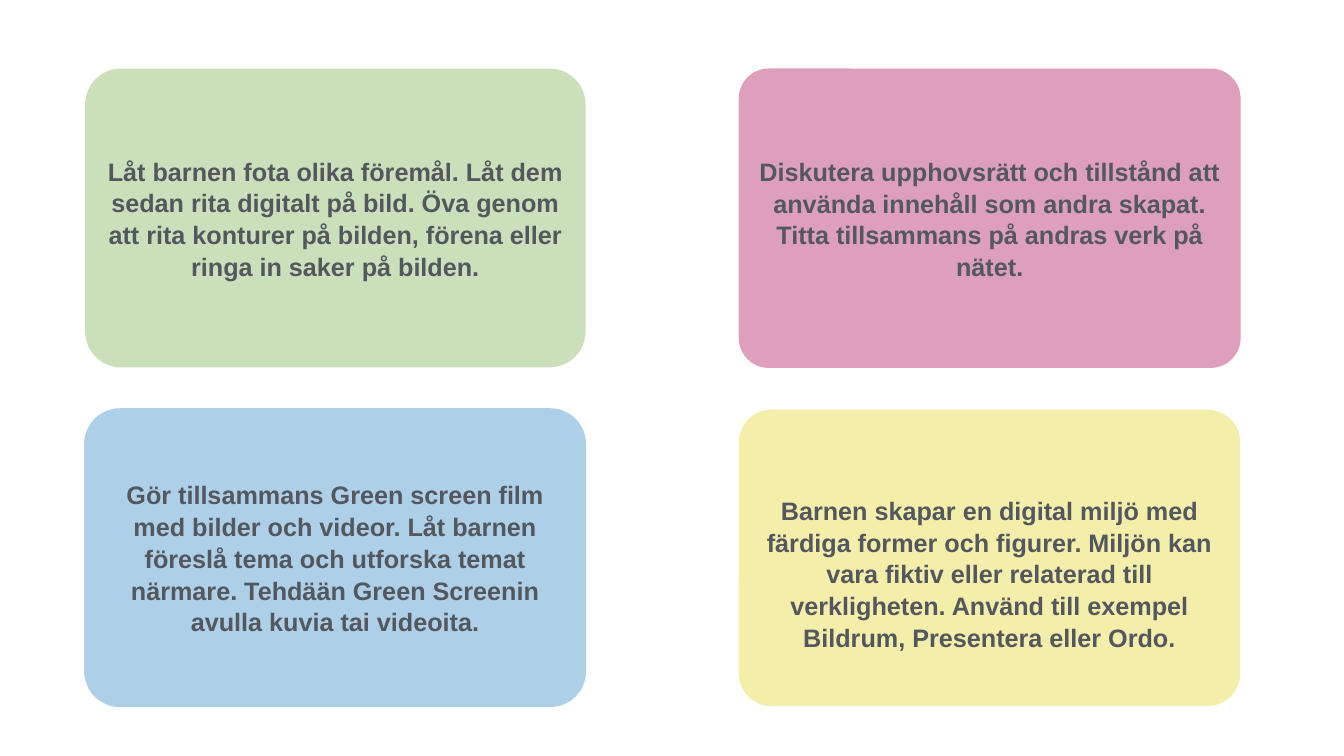
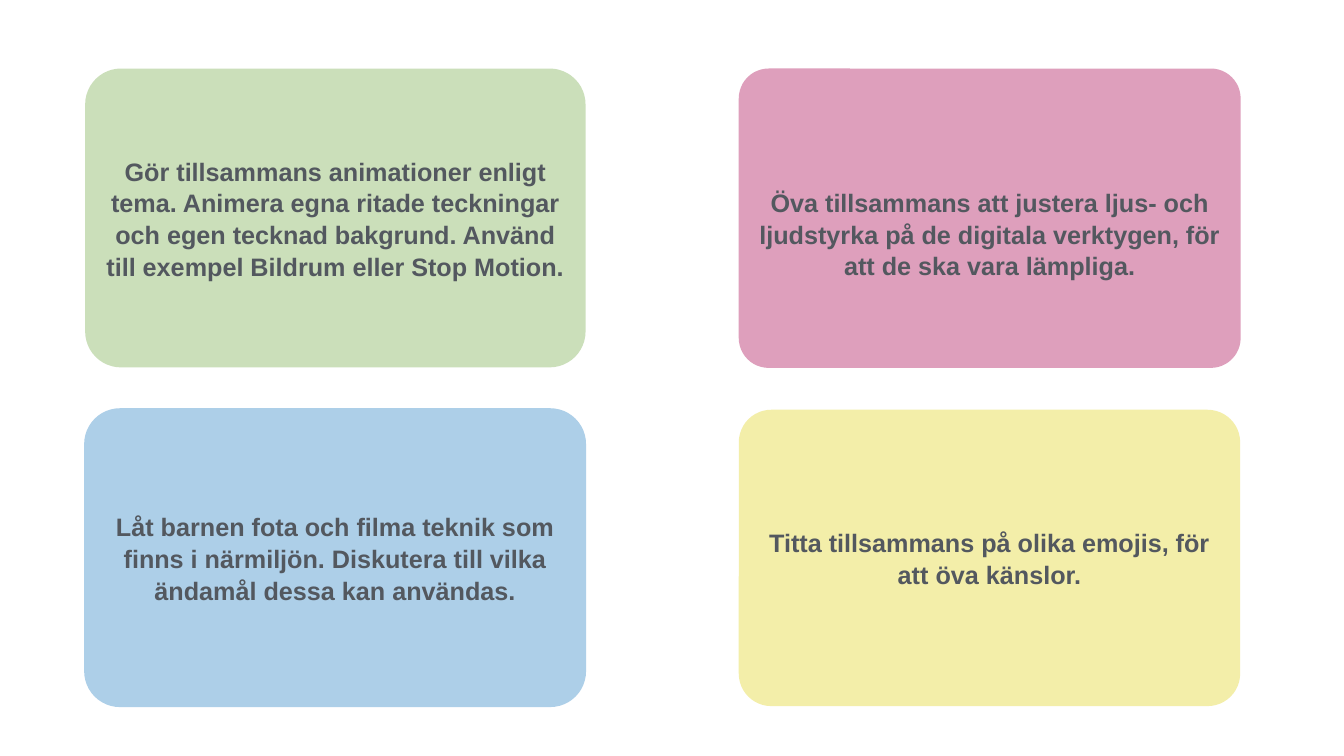
from pptx import Presentation
from pptx.dml.color import RGBColor
from pptx.enum.shapes import MSO_SHAPE
from pptx.enum.text import MSO_ANCHOR, PP_ALIGN
from pptx.util import Inches, Pt

COLORS = {
    "green": "CBDFBA",
    "blue": "ADCFE8",
    "yellow": "F3EEA9",
    "pink": "DE9FBC",
    "text": "53585F",
}
FONT = {"name": "Arial", "size": Pt(36), "bold": True}
INSET = 0.06
LINE_HEIGHT = 0.6

# colour: left, top, width, height, corner radius
CARDS = {
    "green": (1.69, 1.36, 9.93, 5.93, 0.12),
    "blue": (1.67, 8.1, 9.96, 5.93, 0.12),
    "yellow": (14.66, 8.13, 9.95, 5.88, 0.11),
    "pink": (14.66, 1.36, 9.96, 5.94, 0.1),
}

# For each slide, the text of every card and the cards whose text sits lower
SLIDES = [
    ({
        "green": "Låt barnen fota olika föremål. Låt dem sedan rita digitalt på bild. "
                 "Öva genom att rita konturer på bilden, förena eller ringa in saker på bilden.",
        "blue": "Gör tillsammans Green screen film med bilder och videor. Låt barnen föreslå "
                "tema och utforska temat närmare. Tehdään Green Screenin avulla kuvia tai videoita.",
        "yellow": "Barnen skapar en digital miljö med färdiga former och figurer. Miljön kan "
                  "vara fiktiv eller relaterad till verkligheten. Använd till exempel "
                  "Bildrum, Presentera eller Ordo.",
        "pink": "Diskutera upphovsrätt och tillstånd att använda innehåll som andra skapat. "
                "Titta tillsammans på andras verk på nätet.",
    }, {"yellow"}),
    ({
        "green": "Gör tillsammans animationer enligt tema. Animera egna ritade teckningar och "
                 "egen tecknad bakgrund. Använd till exempel Bildrum eller Stop Motion.",
        "blue": "Låt barnen fota och filma teknik som finns i närmiljön. Diskutera till vilka "
                "ändamål dessa kan användas.",
        "yellow": "Titta tillsammans på olika emojis, för att öva känslor.",
        "pink": "Öva tillsammans att justera ljus- och ljudstyrka på de digitala verktygen, "
                "för att de ska vara lämpliga.",
    }, {"pink"}),
]


def add_card(slide, color, text, lowered):
    """Add a rounded card; a lowered text leaves one line free above it."""
    left, top, width, height, radius = CARDS[color]
    card = slide.shapes.add_shape(
        MSO_SHAPE.ROUNDED_RECTANGLE,
        Inches(left), Inches(top), Inches(width), Inches(height),
    )
    card.adjustments[0] = radius
    card.shadow.inherit = False
    card.fill.solid()
    card.fill.fore_color.rgb = RGBColor.from_string(COLORS[color])
    card.line.fill.background()

    frame = card.text_frame
    frame.word_wrap = True
    frame.vertical_anchor = MSO_ANCHOR.MIDDLE
    for side in ("left", "right", "top", "bottom"):
        setattr(frame, f"margin_{side}", Inches(INSET))
    if lowered:
        frame.margin_top = Inches(INSET + LINE_HEIGHT)

    paragraph = frame.paragraphs[0]
    paragraph.alignment = PP_ALIGN.CENTER
    paragraph.line_spacing = 1.05
    run = paragraph.add_run()
    run.text = text
    for attribute, value in FONT.items():
        setattr(run.font, attribute, value)
    run.font.color.rgb = RGBColor.from_string(COLORS["text"])


presentation = Presentation()
presentation.slide_width = Inches(26.67)
presentation.slide_height = Inches(15)
blank_layout = presentation.slide_layouts[6]

for texts, lowered_cards in SLIDES:
    slide = presentation.slides.add_slide(blank_layout)
    for color, text in texts.items():
        add_card(slide, color, text, color in lowered_cards)

presentation.save("out.pptx")
